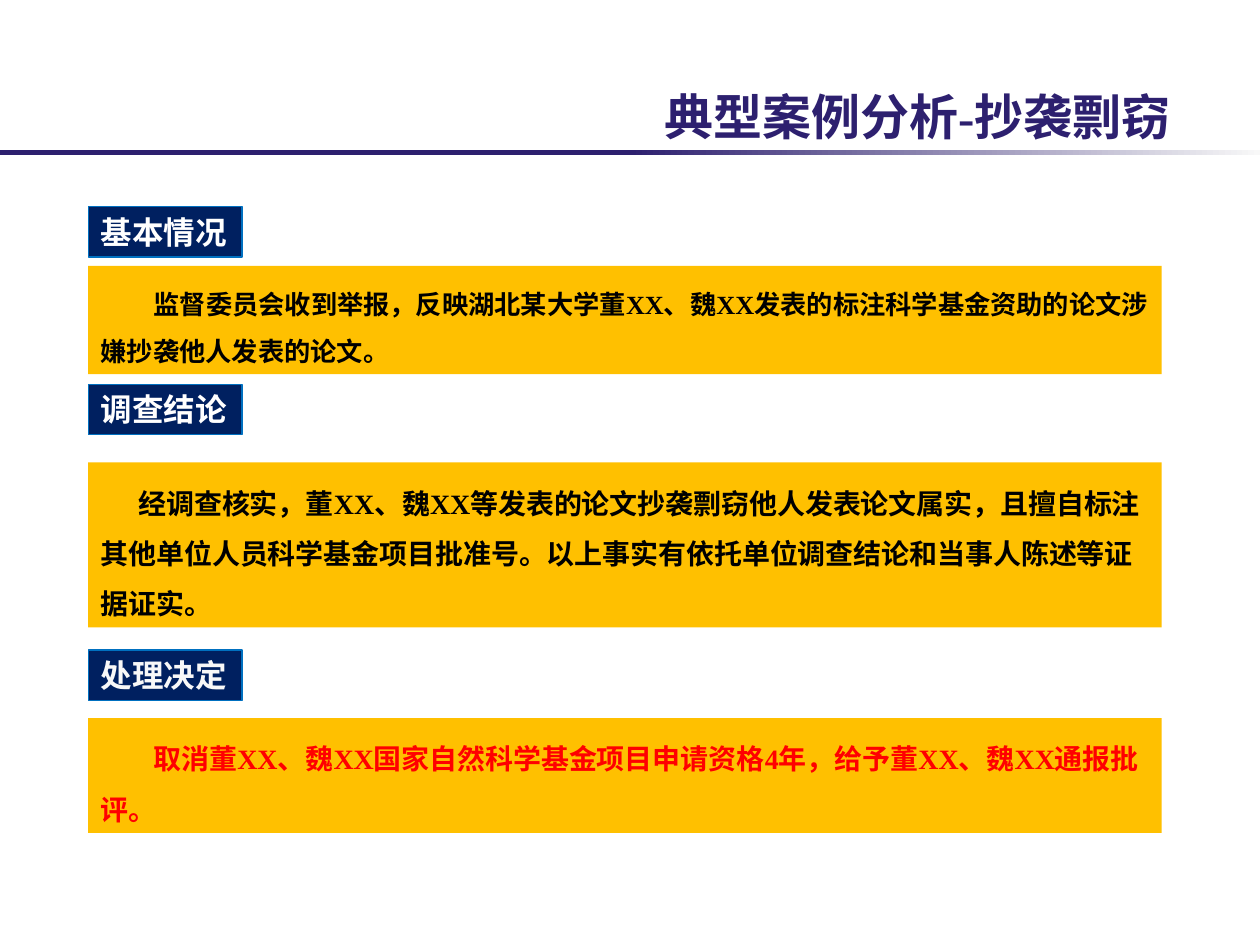
from dataclasses import dataclass
from pptx import Presentation
from pptx.dml.color import RGBColor
from pptx.enum.shapes import MSO_SHAPE
from pptx.enum.text import MSO_ANCHOR, MSO_AUTO_SIZE, PP_ALIGN
from pptx.util import Inches, Pt

RECT = MSO_SHAPE.RECTANGLE
TOP, MIDDLE, BOTTOM = MSO_ANCHOR.TOP, MSO_ANCHOR.MIDDLE, MSO_ANCHOR.BOTTOM
GROW, FIXED = MSO_AUTO_SIZE.SHAPE_TO_FIT_TEXT, MSO_AUTO_SIZE.NONE
LEFT, CENTER = PP_ALIGN.LEFT, PP_ALIGN.CENTER
WIDE, HIGH = Inches(10), Inches(7.5)


@dataclass(frozen=True)
class Theme:
    font: str = "Times New Roman"
    title: str = "2D206F"
    pale: str = "F8F8F8"
    white: str = "FFFFFF"
    navy: str = "002060"
    edge: str = "0070C0"
    gold: str = "FFC000"
    black: str = "000000"
    red: str = "FF0000"
    head: float = 28
    label: float = 18
    body: float = 16
    small: float = 15


THEME = Theme()
MARGIN = 0.07
LABEL_W, LABEL_H = 0.122, 0.4 / 7.5
BODY_W = 0.852

CASES = [
    dict(label="基本情况", ink=THEME.white, top=1.64, body=2.11, high=0.86,
         size=THEME.small, color=THEME.black, indent=0.42,
         text="监督委员会收到举报，反映湖北某大学董XX、魏XX发表的标注科学基金资助的论文"
              "涉嫌抄袭他人发表的论文。"),
    dict(label="调查结论", ink=THEME.white, top=3.05, body=3.67, high=1.31,
         size=THEME.body, color=THEME.black, indent=0.3,
         text="经调查核实，董XX、魏XX等发表的论文抄袭剽窃他人发表论文属实，且擅自标"
              "注其他单位人员科学基金项目批准号。以上事实有依托单位调查结论和当事人陈述等"
              "证据证实。"),
    dict(label="处理决定", ink=THEME.pale, top=5.16, body=5.7, high=0.91,
         size=THEME.body, color=THEME.red, indent=0.42,
         text="取消董XX、魏XX国家自然科学基金项目申请资格4年，给予董XX、魏XX通报批评。"),
]


def rgb(code):
    return RGBColor.from_string(code)


def apply(item, values):
    for name, value in values.items():
        setattr(item, name, value)


def place(x, y, w, h):
    return dict(left=round(x * WIDE), top=round(y * HIGH),
                width=round(w * WIDE), height=round(h * HIGH))


def write(shape, text, size, color, frame, para, indent=0):
    box = shape.text_frame
    box.text = text
    apply(box, frame)
    line = box.paragraphs[0]
    if indent:
        line._p.get_or_add_pPr().set("indent", str(Inches(indent)))
    apply(line, para)
    font = line.runs[0].font
    apply(font, dict(name=THEME.font, size=Pt(size), bold=True))
    font.color.rgb = rgb(color)


def add_box(slide, area, fill=None, edge=None):
    shape = slide.shapes.add_shape(RECT, **area)
    shape.shadow.inherit = False
    if fill:
        shape.fill.solid()
        shape.fill.fore_color.rgb = rgb(fill)
    if edge:
        shape.line.color.rgb = rgb(edge)
        shape.line.width = Pt(0.75)
    else:
        shape.line.fill.background()
    return shape


def add_rule(slide):
    fill = add_box(slide, place(0, 1.19 / 7.5, 1, 0.04 / 7.5)).fill
    fill.gradient()
    fill.gradient_angle = 0
    for stop, spot, code in zip(fill.gradient_stops, (0.5, 1), (THEME.title, THEME.pale)):
        stop.position = spot
        stop.color.rgb = rgb(code)


def add_title(slide, text):
    title = slide.shapes.title
    apply(title, place(0.492, 0.55 / 7.5, 0.472, 0.08))
    frame = dict(vertical_anchor=BOTTOM, auto_size=FIXED, word_wrap=True,
                 margin_left=Inches(0.06), margin_right=Inches(0.06),
                 margin_top=0, margin_bottom=0)
    write(title, text, THEME.head, THEME.title, frame,
          dict(alignment=CENTER, line_spacing=1.1, space_after=Pt(1)))


def add_case(slide, case):
    label = add_box(slide, place(MARGIN, case["top"] / 7.5, LABEL_W, LABEL_H),
                    THEME.navy, THEME.edge)
    write(label, case["label"], THEME.label, case["ink"],
          dict(vertical_anchor=TOP, auto_size=GROW, word_wrap=False),
          dict(alignment=LEFT))
    body = add_box(slide, place(MARGIN, case["body"] / 7.5, BODY_W, case["high"] / 7.5),
                   THEME.gold)
    write(body, case["text"], case["size"], case["color"],
          dict(vertical_anchor=MIDDLE, auto_size=GROW, word_wrap=True),
          dict(alignment=LEFT, line_spacing=1.5), case["indent"])


def main():
    deck = Presentation()
    apply(deck, dict(slide_width=WIDE, slide_height=HIGH))
    slide = deck.slides.add_slide(deck.slide_layouts[5])
    add_rule(slide)
    add_title(slide, "典型案例分析-抄袭剽窃")
    for case in CASES:
        add_case(slide, case)
    deck.save("out.pptx")


if __name__ == "__main__":
    main()
